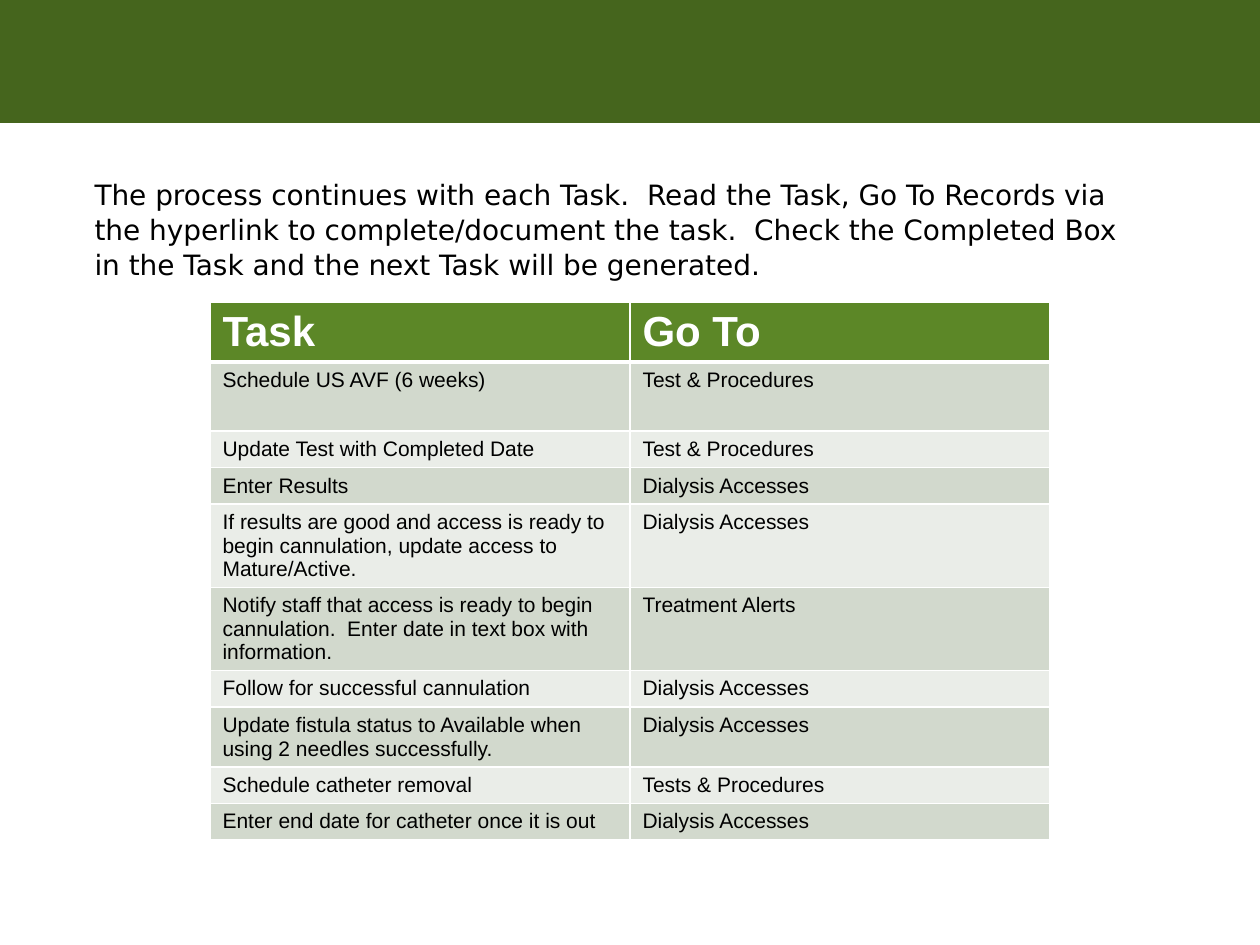
from dataclasses import dataclass

from lxml.etree import SubElement
from pptx import Presentation
from pptx.dml.color import RGBColor
from pptx.enum.shapes import MSO_SHAPE
from pptx.enum.text import MSO_ANCHOR, MSO_AUTO_SIZE, PP_ALIGN
from pptx.oxml.ns import qn
from pptx.util import Inches, Pt


@dataclass(frozen=True)
class Theme:
    band: str = "45651D"
    header: str = "5C8727"
    stripes: tuple = ("D2D9CD", "EAEDE8")
    light: str = "FFFFFF"
    dark: str = "000000"
    title_font: str = "DejaVu Sans"
    table_font: str = "Arial"
    title_size: int = 16
    header_size: int = 24
    body_size: int = 12


THEME = Theme()
INTRO = ("The process continues with each Task.  Read the Task, Go To Records via "
         "the hyperlink to complete/document the task.  Check the Completed Box "
         "in the Task and the next Task will be generated.")
HEADINGS = ("Task", "Go To")
TASKS = [
    ("Schedule US AVF (6 weeks)", "Test & Procedures"),
    ("Update Test with Completed Date", "Test & Procedures"),
    ("Enter Results", "Dialysis Accesses"),
    ("If results are good and access is ready to begin cannulation, "
     "update access to Mature/Active.", "Dialysis Accesses"),
    ("Notify staff that access is ready to begin cannulation.  "
     "Enter date in text box with information.", "Treatment Alerts"),
    ("Follow for successful cannulation", "Dialysis Accesses"),
    ("Update fistula status to Available when using 2 needles successfully.",
     "Dialysis Accesses"),
    ("Schedule catheter removal", "Tests & Procedures"),
    ("Enter end date for catheter once it is out", "Dialysis Accesses"),
]
ONE_LINE, TWO_LINES, THREE_LINES = 0.29, 0.47, 0.66
ROW_HEIGHTS = [0.47, 0.55, ONE_LINE, ONE_LINE, THREE_LINES, THREE_LINES,
               ONE_LINE, TWO_LINES, ONE_LINE, ONE_LINE]


def add_run(paragraph, text, font_name, size, color, bold=False):
    run = paragraph.add_run()
    run.text = text
    run.font.name = font_name
    run.font.size = Pt(size)
    run.font.bold = bold
    run.font.color.rgb = RGBColor.from_string(color)


def add_band(slide, box):
    band = slide.shapes.add_shape(MSO_SHAPE.RECTANGLE, *box)
    band.shadow.inherit = False
    band.fill.solid()
    band.fill.fore_color.rgb = RGBColor.from_string(THEME.band)
    band.line.fill.background()


def fill_title(slide, box):
    title = slide.shapes.title
    title.left, title.top, title.width, title.height = box
    frame = title.text_frame
    frame.word_wrap = True
    frame.auto_size = MSO_AUTO_SIZE.NONE
    frame.vertical_anchor = MSO_ANCHOR.TOP
    frame.margin_left = frame.margin_right = frame.margin_bottom = 0
    frame.margin_top = Inches(0.05)
    paragraph = frame.paragraphs[0]
    paragraph.alignment = PP_ALIGN.LEFT
    paragraph.line_spacing = 1.04
    add_run(paragraph, INTRO, THEME.title_font, THEME.title_size, THEME.dark)


def set_borders(cell, bottom_width):
    """Draw the cell's borders; they must precede its fill in the XML."""
    properties = cell._tc.get_or_add_tcPr()
    for side, width in (("L", 1), ("R", 1), ("T", 1), ("B", bottom_width)):
        line = SubElement(properties, qn(f"a:ln{side}"), w=str(Pt(width)))
        fill = SubElement(line, qn("a:solidFill"))
        SubElement(fill, qn("a:srgbClr"), val=THEME.light)


def fill_cell(cell, text, fill, size, color, bold, bottom_width):
    set_borders(cell, bottom_width)
    cell.fill.solid()
    cell.fill.fore_color.rgb = RGBColor.from_string(fill)
    add_run(cell.text_frame.paragraphs[0], text, THEME.table_font, size, color, bold)


def add_task_table(slide, box):
    rows = [HEADINGS, *TASKS]
    table = slide.shapes.add_table(len(rows), len(HEADINGS), *box).table
    for column in table.columns:
        column.width = box[2] // len(HEADINGS)
    for index, (texts, height) in enumerate(zip(rows, ROW_HEIGHTS)):
        table.rows[index].height = Inches(height)
        if index == 0:
            style = (THEME.header, THEME.header_size, THEME.light, True, 3)
        else:
            style = (THEME.stripes[(index - 1) % 2], THEME.body_size, THEME.dark, False, 1)
        for cell, text in zip(table.rows[index].cells, texts):
            fill_cell(cell, text, *style)


def main():
    presentation = Presentation()
    presentation.slide_width, presentation.slide_height = Inches(10), Inches(7.5)
    width, height = presentation.slide_width, presentation.slide_height
    slide = presentation.slides.add_slide(presentation.slide_layouts[5])

    def place(left, top, across, down):
        """Turn shares of the slide into a box."""
        return int(left * width), int(top * height), int(across * width), int(down * height)

    add_band(slide, place(0, 0, 1, 0.13))
    fill_title(slide, place(0.075, 0.18, 0.82, 0.79))
    add_task_table(slide, place(1 / 6, 0.32, 2 / 3, sum(ROW_HEIGHTS) / 7.5))
    presentation.save("out.pptx")


if __name__ == "__main__":
    main()
